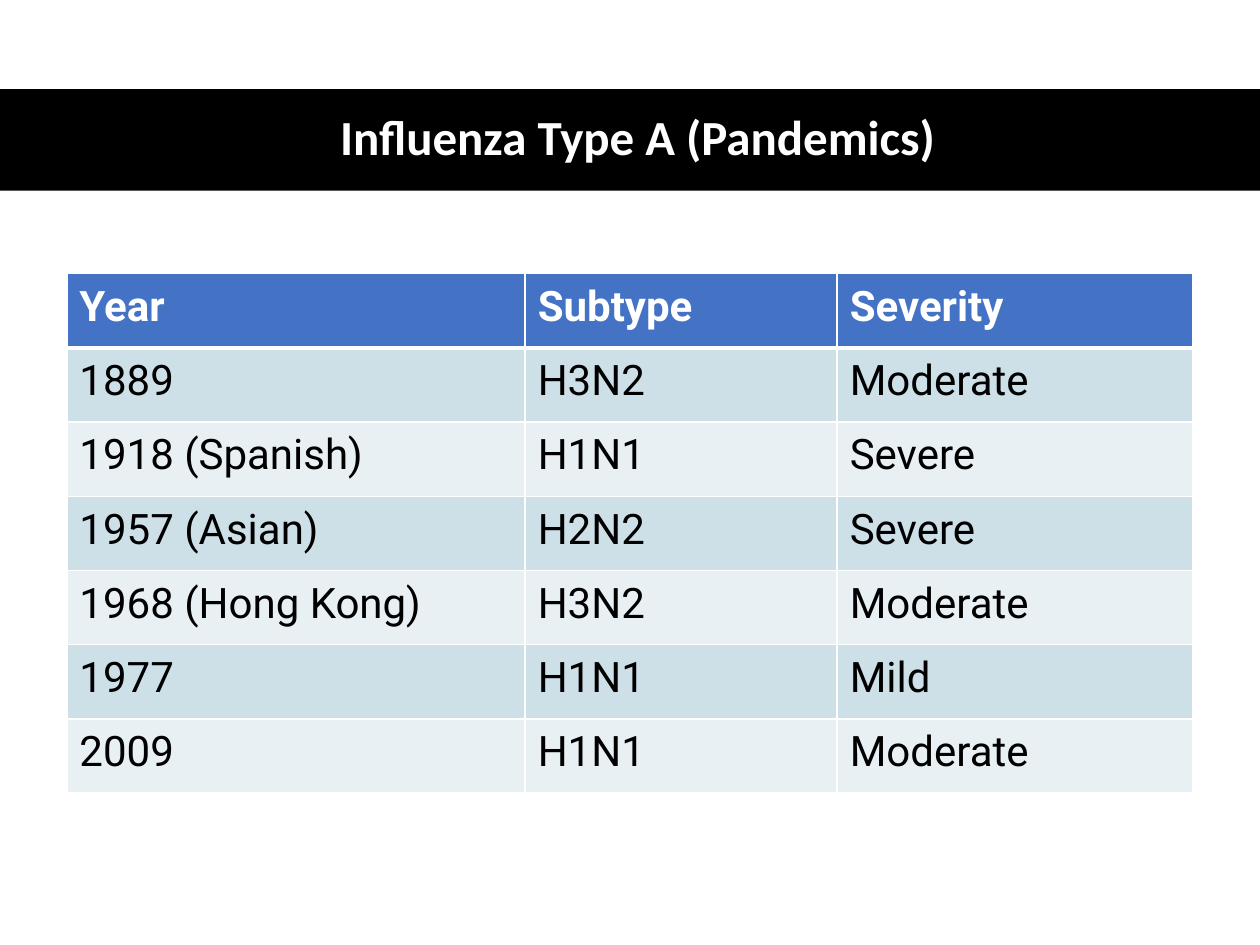
import pptx
import pptx.dml.color
import pptx.enum.shapes
import pptx.enum.text
import pptx.oxml
import pptx.oxml.ns
import pptx.util

Pt = pptx.util.Pt
RGB = pptx.dml.color.RGBColor
BLACK = RGB(0x00, 0x00, 0x00)
WHITE = RGB(0xFF, 0xFF, 0xFF)
BLUE = RGB(0x44, 0x72, 0xC4)
BANDS = (RGB(0xCD, 0xE0, 0xE8), RGB(0xE8, 0xF0, 0xF4))

ROWS = (
    ("Year", "Subtype", "Severity"),
    ("1889", "H3N2", "Moderate"),
    ("1918 (Spanish)", "H1N1", "Severe"),
    ("1957 (Asian)", "H2N2", "Severe"),
    ("1968 (Hong Kong)", "H3N2", "Moderate"),
    ("1977", "H1N1", "Mild"),
    ("2009", "H1N1", "Moderate"),
)
SHARES = (0.407, 0.277, 0.316)


def add_run(para, text, font, size, color, bold):
    """Add one formatted run to a paragraph."""
    run = para.add_run()
    run.text = text
    run.font.name = font
    run.font.size = Pt(size)
    run.font.bold = bold
    run.font.color.rgb = color


def add_title(slide, left, top, width, height):
    """Place the black band and the title centred over it."""
    band = slide.shapes.add_shape(
        pptx.enum.shapes.MSO_SHAPE.RECTANGLE,
        Pt(left), Pt(top), Pt(width), Pt(height))
    band.shadow.inherit = False
    band.fill.solid()
    band.fill.fore_color.rgb = BLACK
    band.line.fill.background()
    title = slide.shapes.title
    title.element.addprevious(band.element)
    title.left, title.top = Pt(left + 33), Pt(top - 0.5)
    title.width, title.height = Pt(width - 57.5), Pt(height)
    frame = title.text_frame
    frame.word_wrap = True
    frame.vertical_anchor = pptx.enum.text.MSO_ANCHOR.MIDDLE
    para = frame.paragraphs[0]
    para.alignment = pptx.enum.text.PP_ALIGN.CENTER
    para.line_spacing = 0.9
    add_run(para, "Influenza Type A (Pandemics)", "Calibri", 28, WHITE, True)


def add_edge(cell, side, width):
    """Draw a white border on one side of a cell."""
    space = pptx.oxml.ns.nsdecls("a")
    cell._tc.get_or_add_tcPr().append(pptx.oxml.parse_xml(
        f'<a:{side} {space} w="{Pt(width)}"><a:solidFill>'
        f'<a:srgbClr val="{WHITE}"/></a:solidFill></a:{side}>'))


def fill_cell(cell, text, row):
    """Format a cell by its row: header first, then two bands in turn."""
    head = row == 0
    cell.margin_left = cell.margin_right = Pt(7.2)
    cell.margin_top = cell.margin_bottom = Pt(5)
    add_edge(cell, "lnL", 1)
    add_edge(cell, "lnR", 1)
    add_edge(cell, "lnT", 3 if row == 1 else 1)
    add_edge(cell, "lnB", 3 if head else 1)
    cell.fill.solid()
    cell.fill.fore_color.rgb = BLUE if head else BANDS[(row - 1) % 2]
    para = cell.text_frame.paragraphs[0]
    add_run(para, text, "Roboto", 24, WHITE if head else BLACK, head)


def add_grid(slide, left, top, width, height):
    """Place the table of pandemics in the given box."""
    grid = slide.shapes.add_table(
        len(ROWS), len(SHARES),
        Pt(left), Pt(top), Pt(width), Pt(height)).table
    for col, share in zip(grid.columns, SHARES):
        col.width = Pt(width * share)
    for i, row in enumerate(ROWS):
        grid.rows[i].height = Pt(height / len(ROWS))
        for j, text in enumerate(row):
            fill_cell(grid.cell(i, j), text, i)


def main():
    """Build the slide and save it."""
    deck = pptx.Presentation()
    deck.slide_width, deck.slide_height = Pt(720), Pt(540)
    slide = deck.slides.add_slide(deck.slide_layouts[5])
    add_title(slide, 0, 51, 720, 58)
    add_grid(slide, 38.2, 156.4, 643.6, 297)
    deck.save("out.pptx")


if __name__ == "__main__":
    main()
